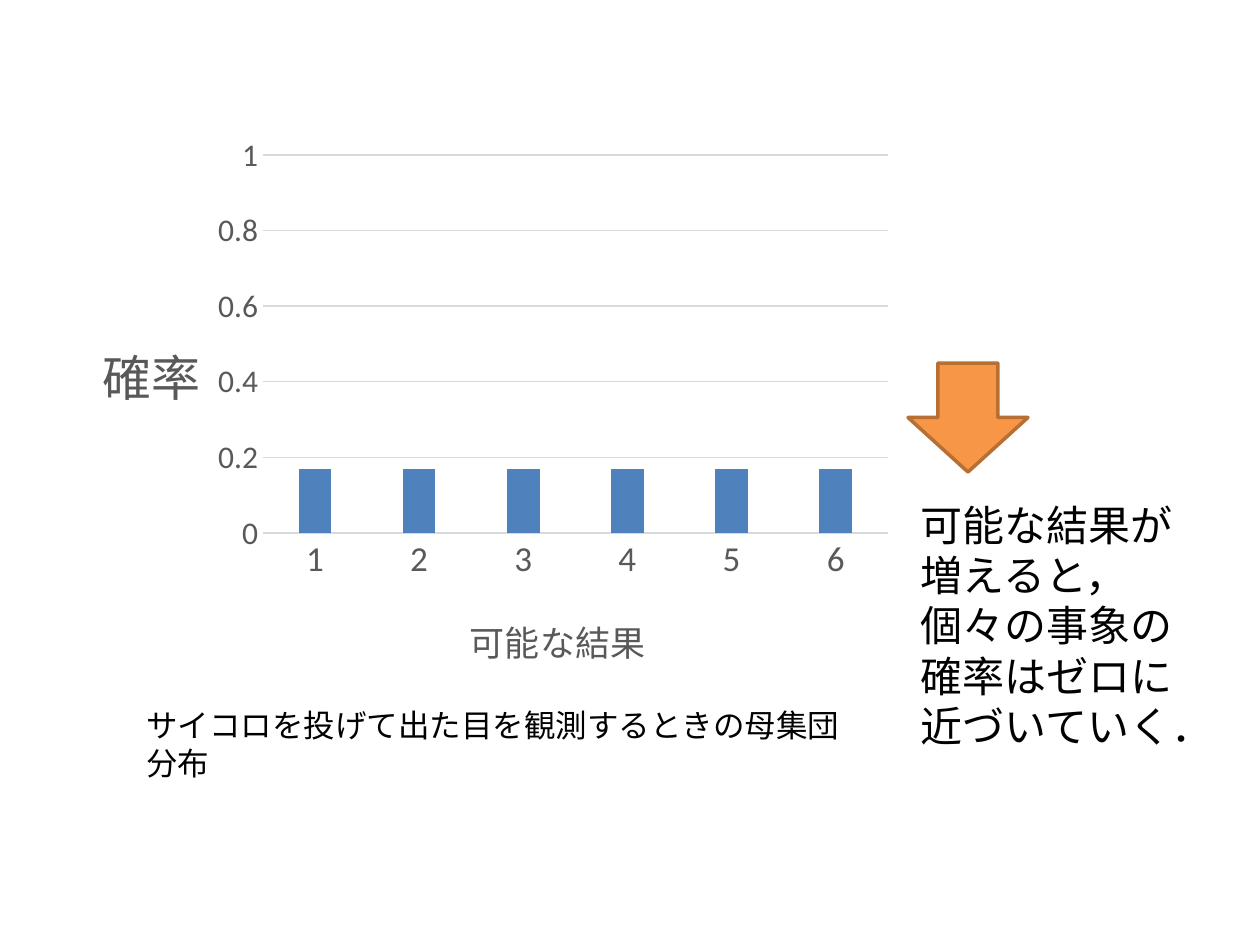
from dataclasses import dataclass

from lxml.etree import SubElement
from pptx import Presentation
from pptx.chart.data import CategoryChartData
from pptx.dml.color import RGBColor
from pptx.enum.chart import XL_CHART_TYPE, XL_TICK_MARK
from pptx.enum.shapes import MSO_SHAPE
from pptx.oxml.ns import qn
from pptx.util import Pt

SLIDE_SIZE = (1260, 945)
EMU_PER_PX = 914400 / 126

OUTCOMES = ["1", "2", "3", "4", "5", "6"]
PROBABILITIES = [0.17] * len(OUTCOMES)

CHART_BOX = (64, 125, 840, 559)
PLOT_BOX = (263, 155, 625, 378)
OUTCOME_TITLE = ("可能な結果", (463, 605))
PROBABILITY_TITLE = ("確率", (94, 325))
CAPTION = ("サイコロを投げて出た目を観測するときの母集団分布", (134, 700, 738, 50))
CONCLUSION = ("可能な結果が増えると，個々の事象の確率はゼロに近づいていく．", (908, 493, 278, 267))
ARROW_BOX = (908, 363, 120, 109)


@dataclass(frozen=True)
class Theme:
    font: str = "Calibri"
    text: str = "000000"
    axis: str = "595959"
    grid: str = "D9D9D9"
    bar: str = "4F81BD"
    arrow: str = "F79646"
    arrow_line: str = "B76F34"
    caption_size: int = 18
    conclusion_size: int = 24
    outcome_size: int = 20
    probability_size: int = 18
    probability_title_size: int = 28


THEME = Theme()


def emu(*lengths):
    return [round(length * EMU_PER_PX) for length in lengths]


def format_font(font, size, color):
    font.name = THEME.font
    font.size = Pt(size)
    font.bold = False
    font.color.rgb = RGBColor.from_string(color)


def format_line(line, color, width):
    line.color.rgb = RGBColor.from_string(color)
    line.width = Pt(width)


def add_text(slide, text, box, *, size):
    frame = slide.shapes.add_textbox(*emu(*box)).text_frame
    frame.word_wrap = True
    run = frame.paragraphs[0].add_run()
    run.text = text
    format_font(run.font, size, THEME.text)


def place_in_chart(part, box, *, index, target=None):
    """Fix a chart part at a slide position; index is where its layout belongs."""
    left, top, width, height = CHART_BOX
    fractions = [(box[0] - left) / width, (box[1] - top) / height]
    fractions += [length / whole for length, whole in zip(box[2:], (width, height))]
    for old_layout in part.findall(qn("c:layout")):
        part.remove(old_layout)
    layout = SubElement(part, qn("c:layout"))
    part.insert(index, layout)
    manual = SubElement(layout, qn("c:manualLayout"))
    settings = [("layoutTarget", target)] if target else []
    settings += [("xMode", "edge"), ("yMode", "edge")]
    settings += zip("xywh", (f"{fraction:.4f}" for fraction in fractions))
    for name, value in settings:
        SubElement(manual, qn(f"c:{name}")).set("val", value)


def format_axis(axis, title, *, size, title_size):
    text, position = title
    axis.major_tick_mark = axis.minor_tick_mark = XL_TICK_MARK.NONE
    format_font(axis.tick_labels.font, size, THEME.axis)
    frame = axis.axis_title.text_frame
    frame.text = text
    format_font(frame.paragraphs[0].runs[0].font, title_size, THEME.axis)
    body = frame._txBody.find(qn("a:bodyPr"))
    body.set("rot", "0")
    body.set("vert", "horz")
    place_in_chart(axis.axis_title._element, position, index=1)


def add_probability_chart(slide):
    data = CategoryChartData()
    data.categories = OUTCOMES
    data.add_series("Series 1", PROBABILITIES)
    chart = slide.shapes.add_chart(
        XL_CHART_TYPE.COLUMN_CLUSTERED, *emu(*CHART_BOX), data
    ).chart
    chart.has_title = chart.has_legend = False
    format_font(chart.font, 10, THEME.text)

    plot = chart.plots[0]
    plot.gap_width, plot.overlap = 219, -27
    plot.vary_by_categories = False
    bars = plot.series[0].format.fill
    bars.solid()
    bars.fore_color.rgb = RGBColor.from_string(THEME.bar)

    outcome_axis, probability_axis = chart.category_axis, chart.value_axis
    format_axis(outcome_axis, OUTCOME_TITLE,
                size=THEME.outcome_size, title_size=THEME.outcome_size)
    format_axis(probability_axis, PROBABILITY_TITLE,
                size=THEME.probability_size, title_size=THEME.probability_title_size)
    format_line(outcome_axis.format.line, THEME.grid, 0.75)
    format_line(probability_axis.major_gridlines.format.line, THEME.grid, 0.75)
    probability_axis.format.line.fill.background()
    probability_axis.minimum_scale, probability_axis.maximum_scale = 0, 1
    probability_axis.major_unit = 0.2

    plot_area = chart._chartSpace.find(".//" + qn("c:plotArea"))
    place_in_chart(plot_area, PLOT_BOX, index=0, target="inner")


def add_arrow(slide):
    arrow = slide.shapes.add_shape(MSO_SHAPE.DOWN_ARROW, *emu(*ARROW_BOX))
    arrow.shadow.inherit = False
    arrow.fill.solid()
    arrow.fill.fore_color.rgb = RGBColor.from_string(THEME.arrow)
    format_line(arrow.line, THEME.arrow_line, 2)


def main():
    presentation = Presentation()
    presentation.slide_width, presentation.slide_height = emu(*SLIDE_SIZE)
    slide = presentation.slides.add_slide(presentation.slide_layouts[6])
    add_probability_chart(slide)
    add_text(slide, *CAPTION, size=THEME.caption_size)
    add_arrow(slide)
    add_text(slide, *CONCLUSION, size=THEME.conclusion_size)
    presentation.save("out.pptx")


if __name__ == "__main__":
    main()
